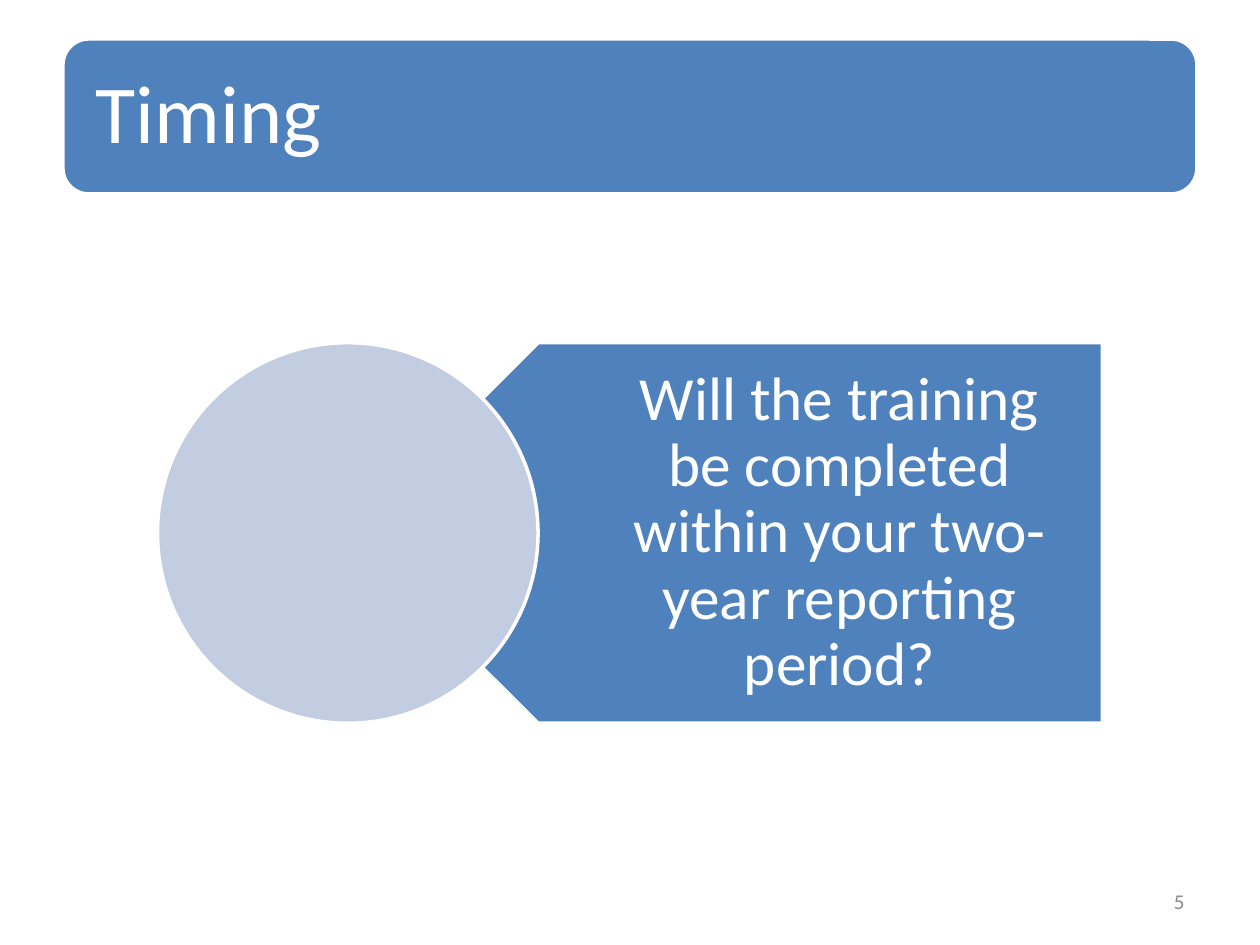
import pptx
from pptx.util import Inches, Pt
from pptx.dml.color import RGBColor
from pptx.enum.shapes import MSO_SHAPE
from pptx.enum.text import MSO_ANCHOR, MSO_AUTO_SIZE, PP_ALIGN

# Content
TITLE = "Timing"
ASK = "Will the training be completed within your two-year reporting period?"
PAGE = "5"

BLUE, PALE, WHITE, GRAY = "4F81BD", "C2CDE1", "FFFFFF", "8C8C8C"
FONT = "Calibri"

# Layout in inches: the circle sits on the arrow's tip
TOP, SIZE = 2.72, 3.02
LEFT, RIGHT = 1.25, 8.75
MID = LEFT + SIZE / 2


def color(code):
    return RGBColor.from_string(code)


def place(shape, box):
    shape.left, shape.top, shape.width, shape.height = map(Inches, box)


def draw(slide, kind, box, fill, turn=0):
    shape = slide.shapes.add_shape(kind, *map(Inches, box))
    shape.shadow.inherit = False
    shape.fill.solid()
    shape.fill.fore_color.rgb = color(fill)
    shape.line.color.rgb = color(WHITE)
    shape.line.width = Pt(2)
    shape.rotation = turn
    return shape


def write(shape, text, size, tint=WHITE, align=PP_ALIGN.LEFT,
          pads=(0.1, 0.05, 0.1, 0.05), space=1.0):
    frame = shape.text_frame
    frame.word_wrap = True
    frame.auto_size = MSO_AUTO_SIZE.NONE
    frame.vertical_anchor = MSO_ANCHOR.MIDDLE
    (frame.margin_left, frame.margin_top,
     frame.margin_right, frame.margin_bottom) = map(Inches, pads)
    para = frame.paragraphs[0]
    para.alignment = align
    para.line_spacing = space
    run = para.add_run()
    run.text = text
    run.font.name = FONT
    run.font.size = Pt(size)
    run.font.color.rgb = color(tint)


def main():
    deck = pptx.Presentation()
    deck.slide_width, deck.slide_height = Inches(10), Inches(7.5)
    slide = deck.slides.add_slide(deck.slide_layouts[5])

    # Title on its banner
    title = slide.shapes.title
    place(title, (0.56, 0.37, 8.88, 1.11))
    write(title, TITLE, 47, pads=(0.2,) * 4, space=0.9)
    banner = draw(slide, MSO_SHAPE.ROUNDED_RECTANGLE, (0.5, 0.31, 9, 1.23), BLUE)
    title.element.addprevious(banner.element)

    # Question in the arrow, which points left
    draw(slide, MSO_SHAPE.PENTAGON, (MID, TOP, RIGHT - MID, SIZE), BLUE, turn=180)
    start = MID + SIZE / 4
    ask = slide.shapes.add_textbox(*map(Inches, (start, TOP, RIGHT - start, SIZE)))
    write(ask, ASK, 35, align=PP_ALIGN.CENTER,
          pads=(1.33, 0.15, 0.27, 0.15), space=0.9)
    draw(slide, MSO_SHAPE.OVAL, (LEFT, TOP, SIZE, SIZE), PALE)

    # Page number
    page = slide.shapes.add_textbox(*map(Inches, (7.17, 6.95, 2.33, 0.4)))
    write(page, PAGE, 12, tint=GRAY, align=PP_ALIGN.RIGHT)

    deck.save("out.pptx")


if __name__ == "__main__":
    main()
